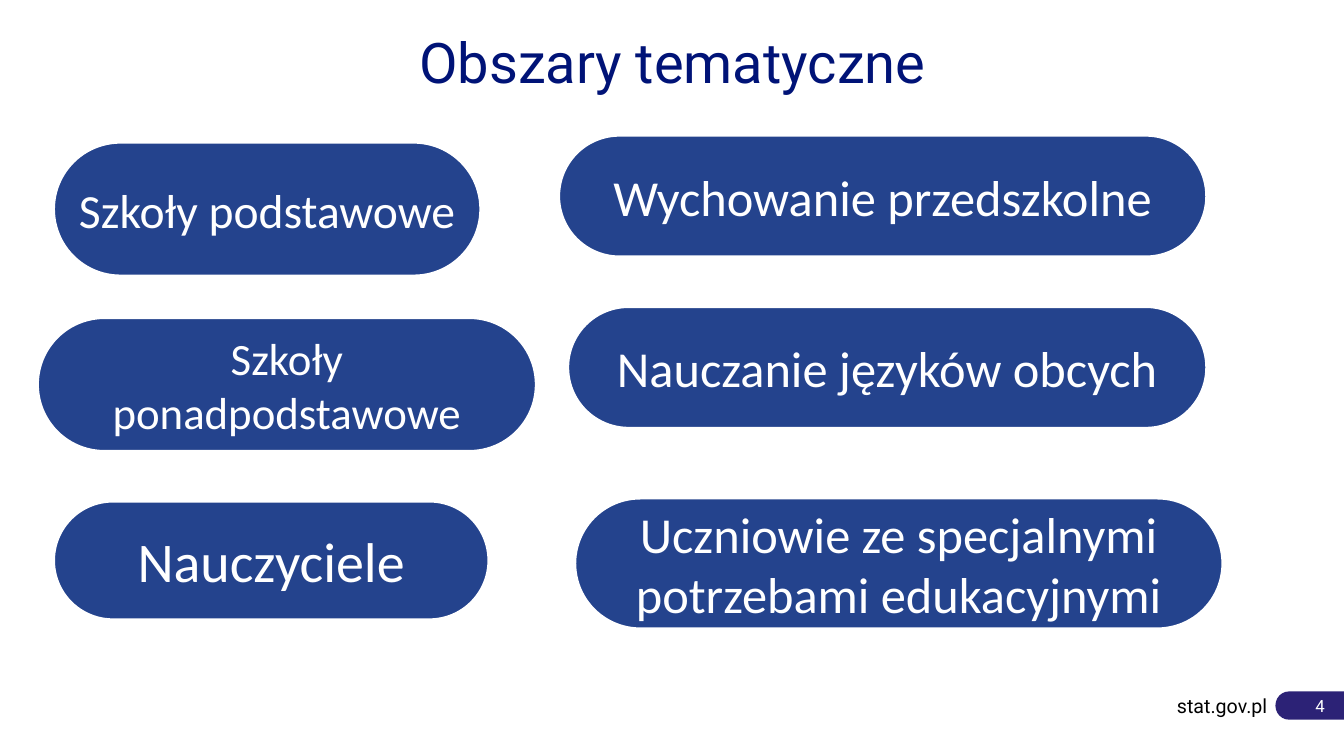
from pptx import Presentation
from pptx.dml.color import RGBColor
from pptx.enum.shapes import MSO_SHAPE
from pptx.enum.text import MSO_ANCHOR, MSO_AUTO_SIZE, PP_ALIGN
from pptx.util import Emu, Pt

PX = 9144  # 100 px to the inch
THEME = {
    "navy": RGBColor(0x00, 0x13, 0x77),
    "blue": RGBColor(0x24, 0x43, 0x8D),
    "violet": RGBColor(0x2C, 0x22, 0x76),
    "white": RGBColor(0xFF, 0xFF, 0xFF),
    "black": RGBColor(0x00, 0x00, 0x00),
    "head": "Roboto", "body": "Calibri",
    "title": 40, "site": 14, "page": 12,
}


def px(*nums):
    return [Emu(num * PX) for num in nums]


def write(shape, text, size, font, color, align=PP_ALIGN.CENTER,
          anchor=MSO_ANCHOR.MIDDLE, left=0, right=0):
    frame = shape.text_frame
    frame.word_wrap = True
    frame.auto_size = MSO_AUTO_SIZE.NONE
    frame.vertical_anchor = anchor
    frame.margin_left, frame.margin_right = px(left, right)
    frame.margin_top, frame.margin_bottom = px(5, 5)
    frame.text = text
    para = frame.paragraphs[0]
    para.alignment = align
    para.font.size = Pt(size)
    para.font.name = THEME[font]
    para.font.color.rgb = THEME[color]
    return para


deck = Presentation()
deck.slide_width, deck.slide_height = px(1333, 750)
slide = deck.slides.add_slide(deck.slide_layouts[5])
shapes = slide.shapes

# Title
title = shapes.title
title.left, title.top, title.width, title.height = px(37, 21, 1260, 79)
write(title, "Obszary tematyczne", THEME["title"], "head", "navy",
      anchor=MSO_ANCHOR.BOTTOM).line_spacing = 0.9

# Topic pills: left, top, width, height, type size, text
topics = [
    (53, 141, 424, 133, 34, "Szkoły podstawowe"),
    (37, 315, 495, 133, 32, "Szkoły ponadpodstawowe"),
    (53, 497, 432, 118, 40, "Nauczyciele"),
    (554, 134, 643, 121, 36, "Wychowanie przedszkolne"),
    (563, 304, 634, 121, 36, "Nauczanie języków obcych"),
    (570, 494, 643, 130, 36,
     "Uczniowie ze specjalnymi potrzebami edukacyjnymi"),
]
for *box, size, text in topics:
    pill = shapes.add_shape(MSO_SHAPE.ROUNDED_RECTANGLE, *px(*box))
    pill.adjustments[0] = 0.5
    pill.shadow.inherit = False
    pill.fill.solid()
    pill.fill.fore_color.rgb = THEME["blue"]
    pill.line.color.rgb = THEME["white"]
    pill.line.width = Pt(2.25)
    write(pill, text, size, "body", "white")

# Footer: site and page number
site = shapes.add_textbox(*px(1159, 683, 98, 34))
write(site, "stat.gov.pl", THEME["site"], "head", "black", PP_ALIGN.RIGHT)

page = shapes.add_shape(MSO_SHAPE.FLOWCHART_TERMINATOR, *px(1265, 686, 83, 28))
page.shadow.inherit = False
page.fill.solid()
page.fill.fore_color.rgb = THEME["violet"]
page.line.fill.background()
write(page, "4", THEME["page"], "head", "white", PP_ALIGN.RIGHT,
      left=4, right=30)

deck.save("out.pptx")
